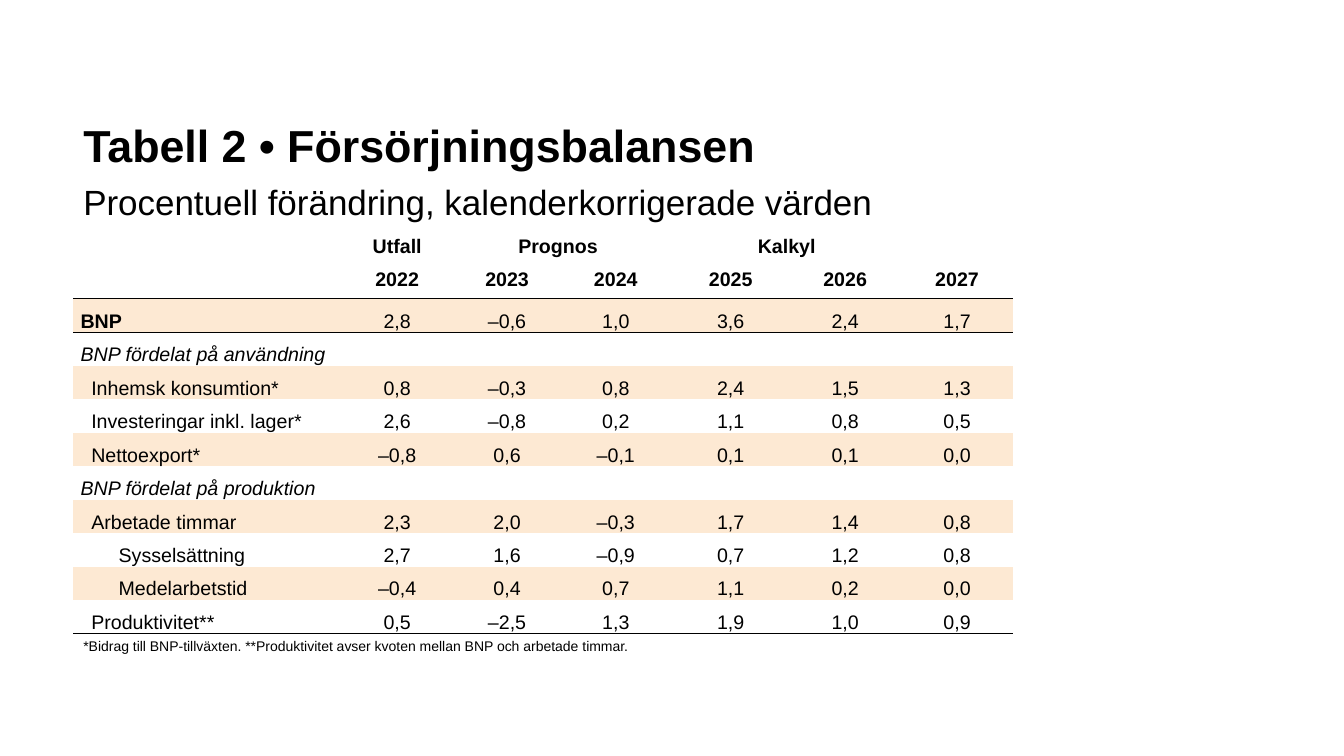
from dataclasses import dataclass

from lxml import etree
from pptx import Presentation
from pptx import util as u
from pptx.dml.color import RGBColor
from pptx.enum import text
from pptx.oxml import ns


@dataclass(frozen=True)
class Theme:
    """Colours, font and type sizes of the slide."""
    font: str = "Arial"
    ink: str = "000000"
    band: str = "FDE9D3"
    heading: int = 32
    subheading: int = 25
    body: int = 14
    note: int = 10
    leading: int = 13
    plain_table: str = "{2D5ABB26-0587-4C30-8999-92F81FD0307C}"


LEFT = 1.85
PADDING = 0.18
COLUMN_WIDTHS = [6.71, 2.9, 2.64, 2.84, 2.95, 2.82, 2.82]
GROUPS = ["", "Utfall", "Prognos", "", "Kalkyl", "", ""]
YEARS = ["", "2022", "2023", "2024", "2025", "2026", "2027"]
BALANCE = [
    ("BNP", 0, "2,8 –0,6 1,0 3,6 2,4 1,7"),
    ("BNP fördelat på användning", 0, ""),
    ("Inhemsk konsumtion*", 0.27, "0,8 –0,3 0,8 2,4 1,5 1,3"),
    ("Investeringar inkl. lager*", 0.27, "2,6 –0,8 0,2 1,1 0,8 0,5"),
    ("Nettoexport*", 0.27, "–0,8 0,6 –0,1 0,1 0,1 0,0"),
    ("BNP fördelat på produktion", 0, ""),
    ("Arbetade timmar", 0.27, "2,3 2,0 –0,3 1,7 1,4 0,8"),
    ("Sysselsättning", 0.96, "2,7 1,6 –0,9 0,7 1,2 0,8"),
    ("Medelarbetstid", 0.96, "–0,4 0,4 0,7 1,1 0,2 0,0"),
    ("Produktivitet**", 0.27, "0,5 –2,5 1,3 1,9 1,0 0,9"),
]


class SlideBuilder:
    """Holds the theme and the current slide and adds its elements."""

    def __init__(self, slide, theme):
        """Keep the slide and its theme."""
        self.slide = slide
        self.theme = theme

    def style(self, run, size, bold=False, italic=False):
        """Format one run."""
        run.font.name = self.theme.font
        run.font.size = u.Pt(size)
        run.font.bold = bold
        run.font.italic = italic
        run.font.color.rgb = RGBColor.from_string(self.theme.ink)

    def title(self, heading, subheading, *box):
        """Add the heading with the subheading on the line below."""
        frame = self.slide.shapes.add_textbox(*map(u.Cm, box)).text_frame
        frame.word_wrap = True
        frame.vertical_anchor = text.MSO_ANCHOR.MIDDLE
        lines = frame.paragraphs[0]
        lines.text = f"{heading}\v{subheading}"
        lines.line_spacing = 1.2
        lines.space_after = u.Pt(4)
        self.style(lines.runs[0], self.theme.heading, bold=True)
        self.style(lines.runs[1], self.theme.subheading)

    def footnote(self, note, *box):
        """Add a small unwrapped note."""
        frame = self.slide.shapes.add_textbox(*map(u.Cm, box)).text_frame
        frame.word_wrap = False
        frame.auto_size = text.MSO_AUTO_SIZE.SHAPE_TO_FIT_TEXT
        frame.text = note
        self.style(frame.paragraphs[0].runs[0], self.theme.note)

    def table(self, rows, columns, widths, *box):
        """Add a table without style and return it."""
        frame = self.slide.shapes.add_table(rows, columns, *map(u.Cm, box))
        table = frame.table
        table.first_row = table.horz_banding = False
        style_id = table._tbl.tblPr.find(ns.qn("a:tableStyleId"))
        style_id.text = self.theme.plain_table
        for column, width in zip(table.columns, widths):
            column.width = u.Cm(width)
        return table

    def cell(self, cell, content, anchor, centred=True, indent=0, band=False,
             bold=False, italic=False):
        """Fill one table cell and format it."""
        cell.margin_left = u.Cm(PADDING + indent)
        cell.margin_right = u.Cm(PADDING)
        cell.margin_top = cell.margin_bottom = 0
        cell.vertical_anchor = anchor
        if band:
            cell.fill.solid()
            cell.fill.fore_color.rgb = RGBColor.from_string(self.theme.band)
        else:
            cell.fill.background()
        entry = cell.text_frame.paragraphs[0]
        entry.text = content
        entry.line_spacing = u.Pt(self.theme.leading)
        entry.space_after = u.Pt(1)
        entry.alignment = (text.PP_ALIGN.CENTER if centred
                           else text.PP_ALIGN.LEFT)
        for run in entry.runs:
            self.style(run, self.theme.body, bold, italic)

    def rule(self, row, side):
        """Draw a border along one side (lnT or lnB) of a table row."""
        for cell in row.cells:
            line = etree.Element(ns.qn(f"a:{side}"), w=str(u.Pt(1)))
            fill = etree.SubElement(line, ns.qn("a:solidFill"))
            etree.SubElement(fill, ns.qn("a:srgbClr"), val=self.theme.ink)
            cell._tc.get_or_add_tcPr().insert(0, line)


def add_balance(builder):
    """Add the table of the supply balance."""
    table = builder.table(len(BALANCE) + 2, len(YEARS), COLUMN_WIDTHS,
                          LEFT, 5.84, 23.62, 10.13)
    for row, headings in enumerate([GROUPS, YEARS]):
        for column, heading in enumerate(headings):
            builder.cell(table.cell(row, column), heading,
                         text.MSO_ANCHOR.MIDDLE, bold=True)
    for group in (2, 4):
        table.cell(0, group).merge(table.cell(0, group + 1))
    table.cell(0, 2).margin_right = u.Cm(PADDING + 0.27)

    for index, (item, indent, figures) in enumerate(BALANCE):
        values = figures.split() or [""] * (len(YEARS) - 1)
        band = index % 2 == 0
        builder.cell(table.cell(index + 2, 0), item, text.MSO_ANCHOR.BOTTOM,
                     centred=False, indent=indent, band=band,
                     bold=index == 0, italic=not figures)
        for column, value in enumerate(values, 1):
            builder.cell(table.cell(index + 2, column), value,
                         text.MSO_ANCHOR.BOTTOM, band=band)

    for row, side in ((1, "lnB"), (2, "lnT"), (len(BALANCE) + 1, "lnB")):
        builder.rule(table.rows[row], side)


def main():
    """Build and save the slide."""
    deck = Presentation()
    deck.slide_width = u.Cm(33.87)
    deck.slide_height = u.Cm(19.05)
    builder = SlideBuilder(deck.slides.add_slide(deck.slide_layouts[6]),
                           Theme())
    builder.title("Tabell 2 • Försörjningsbalansen",
                  "Procentuell förändring, kalenderkorrigerade värden",
                  LEFT, 2.44, 26.7, 3.43)
    add_balance(builder)
    builder.footnote("*Bidrag till BNP-tillväxten. **Produktivitet avser "
                     "kvoten mellan BNP och arbetade timmar.",
                     LEFT, 15.93, 14.48, 0.69)
    deck.save("out.pptx")


if __name__ == "__main__":
    main()
